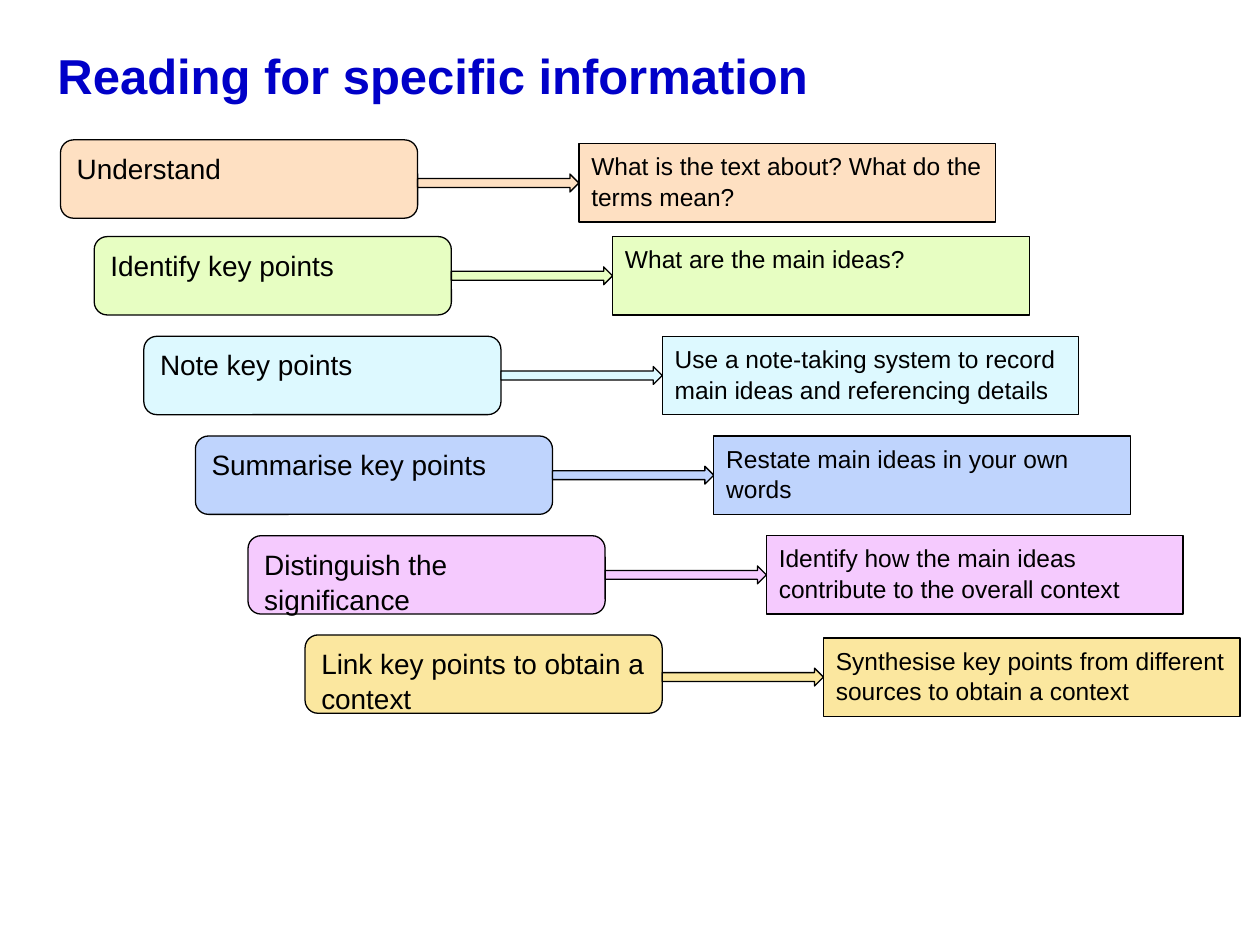
from dataclasses import dataclass

from pptx import Presentation
from pptx.dml.color import RGBColor
from pptx.enum.shapes import MSO_SHAPE
from pptx.enum.text import MSO_ANCHOR, PP_ALIGN
from pptx.util import Cm, Pt


@dataclass(frozen=True)
class Theme:
    font: str = "Arial"
    title_color: str = "0000C8"
    ink: str = "000000"
    row_fills: tuple = ("FEE0C2", "E7FEC2", "DDF9FF", "BFD4FD", "F5CAFE", "FBE79F")
    title_size: int = 28
    step_size: int = 16
    note_size: int = 14
    line_width: float = 0.75
    line_spacing: float = 1.05


STEP_WIDTH, ARROW_WIDTH, NOTE_WIDTH = 7.2, 3.25, 8.4
BOX_HEIGHT, ARROW_HEIGHT = 1.58, 0.36

# left, step top, note top (cm), step, note
ROWS = (
    (1.22, 2.82, 2.9, "Understand",
     "What is the text about? What do the terms mean?"),
    (1.9, 4.77, 4.77, "Identify key points",
     "What are the main ideas?"),
    (2.9, 6.78, 6.78, "Note key points",
     "Use a note-taking system to record main ideas and referencing details"),
    (3.94, 8.79, 8.79, "Summarise key points",
     "Restate main ideas in your own words"),
    (5.0, 10.8, 10.8, "Distinguish the significance",
     "Identify how the main ideas contribute to the overall context"),
    (6.15, 12.8, 12.86, "Link key points to obtain a context",
     "Synthesise key points from different sources to obtain a context"),
)


def write_text(shape, text, *, theme, size, color, bold=False):
    frame = shape.text_frame
    frame.word_wrap = True
    frame.vertical_anchor = MSO_ANCHOR.TOP
    paragraph = frame.paragraphs[0]
    paragraph.alignment = PP_ALIGN.LEFT
    paragraph.line_spacing = theme.line_spacing
    run = paragraph.add_run()
    run.text = text
    run.font.name = theme.font
    run.font.size = Pt(size)
    run.font.bold = bold
    run.font.color.rgb = RGBColor.from_string(color)


class SlideBuilder:
    def __init__(self, slide, theme):
        self.slide = slide
        self.theme = theme

    def title(self, text, left, top, width, height):
        box = self.slide.shapes.add_textbox(Cm(left), Cm(top), Cm(width), Cm(height))
        write_text(box, text, theme=self.theme, size=self.theme.title_size,
                   color=self.theme.title_color, bold=True)

    def outlined(self, preset, left, top, width, height, fill):
        shape = self.slide.shapes.add_shape(
            preset, Cm(left), Cm(top), Cm(width), Cm(height))
        shape.shadow.inherit = False
        shape.fill.solid()
        shape.fill.fore_color.rgb = RGBColor.from_string(fill)
        shape.line.color.rgb = RGBColor.from_string(self.theme.ink)
        shape.line.width = Pt(self.theme.line_width)
        return shape

    def step(self, text, left, top, fill):
        box = self.outlined(MSO_SHAPE.ROUNDED_RECTANGLE, left, top,
                            STEP_WIDTH, BOX_HEIGHT, fill)
        write_text(box, text, theme=self.theme, size=self.theme.step_size,
                   color=self.theme.ink)

    def arrow(self, left, top, fill):
        self.outlined(MSO_SHAPE.RIGHT_ARROW, left, top, ARROW_WIDTH, ARROW_HEIGHT, fill)

    def note(self, text, left, top, fill):
        box = self.outlined(MSO_SHAPE.RECTANGLE, left, top, NOTE_WIDTH, BOX_HEIGHT, fill)
        write_text(box, text, theme=self.theme, size=self.theme.note_size,
                   color=self.theme.ink)


def main():
    presentation = Presentation()
    presentation.slide_width, presentation.slide_height = Cm(25.4), Cm(19.05)
    slide = presentation.slides.add_slide(presentation.slide_layouts[6])
    theme = Theme()
    builder = SlideBuilder(slide, theme)

    builder.title("Reading for specific information", 0.91, 0.74, 23.44, 1.85)
    for (left, step_top, note_top, step, note), fill in zip(ROWS, theme.row_fills):
        arrow_left = left + STEP_WIDTH
        arrow_top = note_top + (BOX_HEIGHT - ARROW_HEIGHT) / 2
        builder.step(step, left, step_top, fill)
        builder.arrow(arrow_left, arrow_top, fill)
        builder.note(note, arrow_left + ARROW_WIDTH, note_top, fill)

    presentation.save("out.pptx")


if __name__ == "__main__":
    main()
